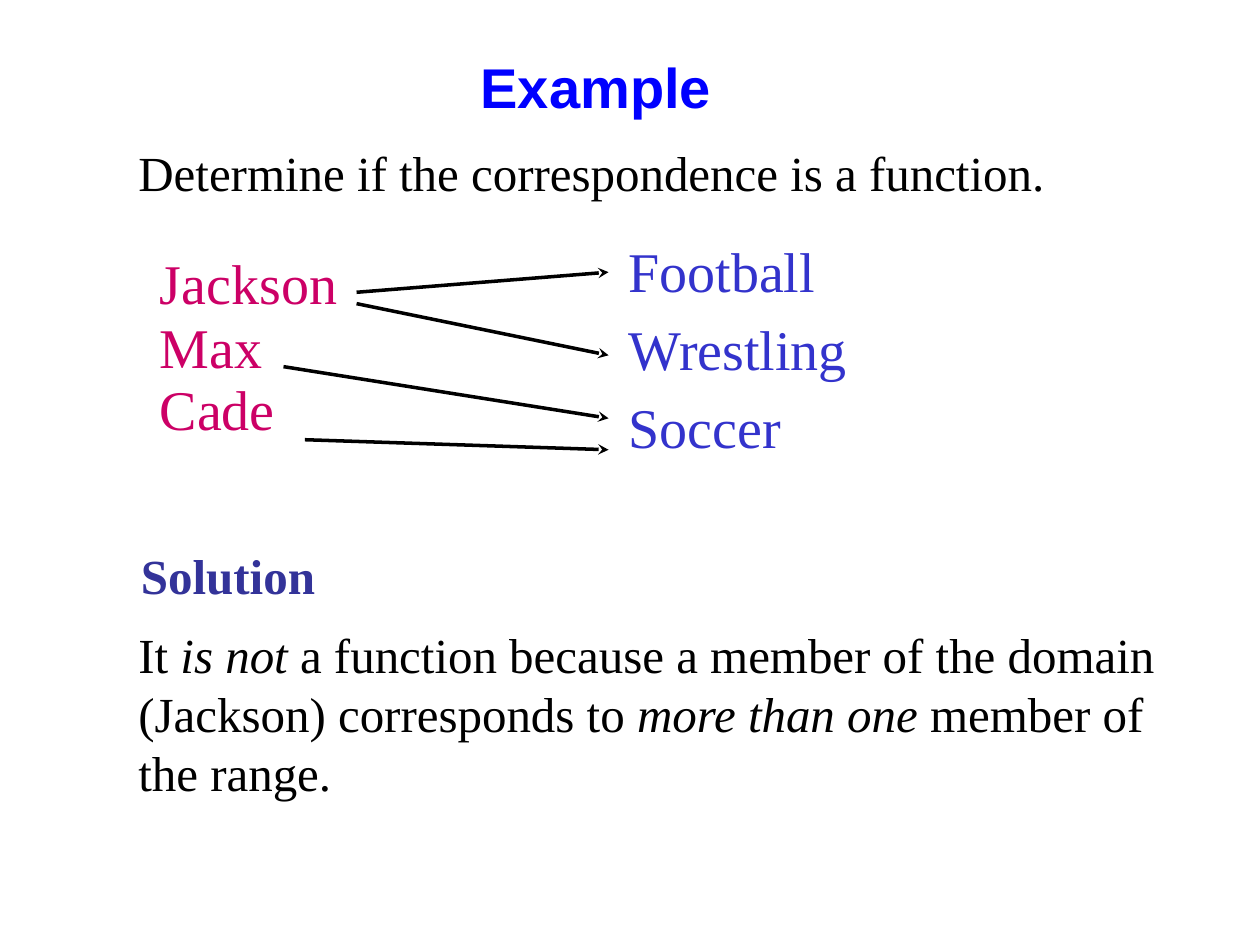
import pptx
import pptx.dml.color
import pptx.enum.shapes
import pptx.enum.text
import pptx.util
from lxml import etree

Inches = pptx.util.Inches
Pt = pptx.util.Pt
BLACK, PINK, BLUE = "000000", "CC0066", "3333CC"


def color(code):
    """Turn a hex string into a colour."""
    return pptx.dml.color.RGBColor.from_string(code)


class Deck:
    """Hold the text style and the current slide."""

    def __init__(self, slide, font="Times New Roman", size=28):
        self.slide, self.font, self.size = slide, font, size

    def text(self, place, paras, tint=BLACK, size=None, font=None,
             bold=False, wrap=True, align=None, lines=()):
        """Add a text box whose paragraphs are lists of (words, italic) runs."""
        size = size or self.size
        box = self.slide.shapes.add_textbox(*map(Inches, place))
        frame = box.text_frame
        frame.word_wrap = wrap
        for i, runs in enumerate(paras):
            para = frame.add_paragraph() if i else frame.paragraphs[0]
            para.alignment = align
            if i:
                para.space_before = Pt(size / 2)
            if lines:
                para.line_spacing = lines[i]
            for words, slant in runs:
                run = para.add_run()
                run.text = words
                run.font.name = font or self.font
                run.font.size = Pt(size)
                run.font.bold = bold
                run.font.italic = slant
                run.font.color.rgb = color(tint)

    def arrow(self, start, end):
        """Add a black line with a stealth head at its end."""
        link = self.slide.shapes.add_connector(
            pptx.enum.shapes.MSO_CONNECTOR.STRAIGHT,
            *map(Inches, start + end))
        link.line.color.rgb = color(BLACK)
        link.line.width = Pt(2)
        space = "{http://schemas.openxmlformats.org/drawingml/2006/main}"
        props = link._element.spPr
        etree.SubElement(link.line._get_or_add_ln(), space + "tailEnd",
                         type="stealth")
        etree.SubElement(props, space + "effectLst")


def plain(*words):
    """Give each string its own upright paragraph."""
    return [[(word, False)] for word in words]


def main():
    """Build the slide and save it."""
    show = pptx.Presentation()
    show.slide_width, show.slide_height = Inches(10), Inches(7.5)
    deck = Deck(show.slides.add_slide(show.slide_layouts[6]))

    deck.text((1, 1.08, 7.75, 0.57),
              plain("Determine if the correspondence is a function."))
    deck.text((1.17, 2.07, 1.75, 1.59), plain("Jackson", "Max", "Cade"),
              PINK, 32, lines=(0.7, 0.5, 0.5))
    deck.text((4.89, 1.95, 3.5, 1.83),
              plain("Football", "Wrestling", "Soccer"),
              BLUE, 32, lines=(0.75,) * 3)
    deck.text((1.02, 4.28, 1.92, 0.57), plain("Solution"), "333399", bold=True)
    deck.text((1, 4.91, 8.5, 1.51), [[
        ("It ", False), ("is not", True),
        (" a function because a member of the domain (Jackson)"
         " corresponds to ", False),
        ("more than one", True), (" member of the range.", False)]])

    tip = 4.83
    for start, level in (((2.42, 3.49), 3.57), ((2.25, 2.91), 3.32),
                         ((2.83, 2.41), 2.82), ((2.83, 2.32), 2.16)):
        deck.arrow(start, (tip, level))

    deck.text((2, 0.37, 5.46, 0.5), plain("Example"), "0000FF", 32, "Arial",
              bold=True, wrap=False, align=pptx.enum.text.PP_ALIGN.CENTER)
    show.save("out.pptx")


if __name__ == "__main__":
    main()
